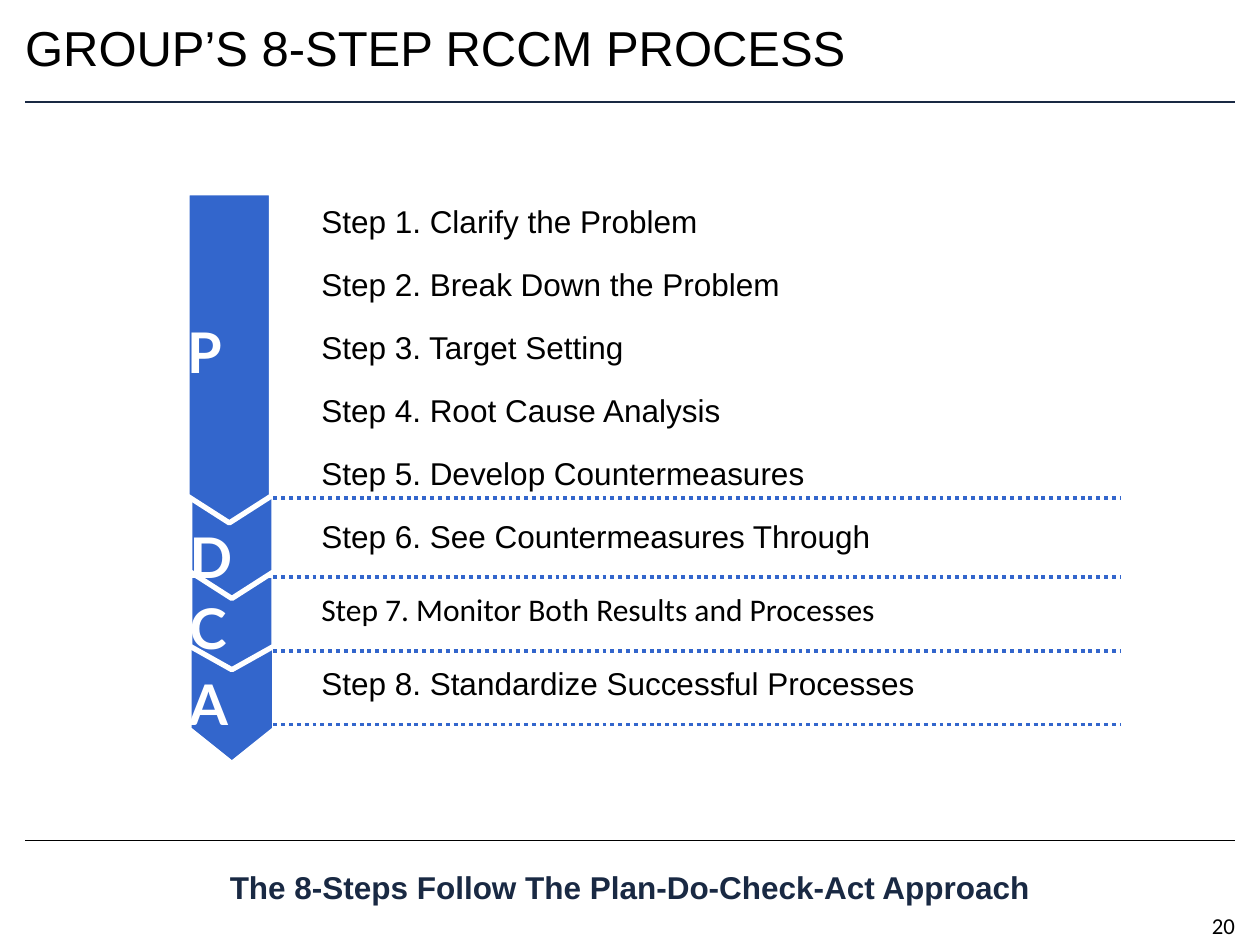
"""Build the eight-step problem-solving slide with its Plan-Do-Check-Act column."""

from dataclasses import dataclass

import pptx
import pptx.dml.color
import pptx.enum.dml
import pptx.enum.shapes
import pptx.enum.text
import pptx.oxml.ns
import pptx.util
from lxml import etree

Inches = pptx.util.Inches
Align = pptx.enum.text.PP_ALIGN
Anchor = pptx.enum.text.MSO_ANCHOR


@dataclass(frozen=True)
class Theme:
    black: str = "000000"
    navy: str = "192943"
    blue: str = "3366CC"
    white: str = "FFFFFF"
    sans: str = "Arial"
    body: str = "Calibri"
    display: str = "Lato"
    title_size: float = 28
    text_size: float = 18
    letter_size: float = 32
    number_size: float = 13


THEME = Theme()


@dataclass(frozen=True)
class Label:
    text: str
    left: float
    top: float
    width: float
    height: float
    size: float = THEME.text_size
    font: str = THEME.sans
    color: str = THEME.black
    bold: bool = False
    align: Align = Align.LEFT
    anchor: Anchor = Anchor.TOP
    spacing: float | None = None
    insets: tuple = (0, 0, 0, 0)
    wrap: bool = True


@dataclass(frozen=True)
class Phase:
    letter: str
    center_x: float
    center_y: float
    length: float
    breadth: float
    tip: float
    top_inset: float


@dataclass(frozen=True)
class Rule:
    left: float
    right: float
    y: float
    color: str
    weight: float
    dotted: bool = False


PHASES = [
    Phase("A", 1.84, 5.56, 1.0, 0.68, 0.4, 0.22),
    Phase("C", 1.84, 4.94, 0.75, 0.67, 0.28, 0.22),
    Phase("D", 1.84, 4.2, 1.1, 0.67, 0.32, 0.58),
    Phase("P", 1.82, 2.84, 2.62, 0.67, 0.32, 0.05),
]

STEPS = [
    ("Clarify the Problem", 1.48),
    ("Break Down the Problem", 1.98),
    ("Target Setting", 2.48),
    ("Root Cause Analysis", 2.98),
    ("Develop Countermeasures", 3.48),
    ("See Countermeasures Through", 3.98),
    ("Monitor Both Results and Processes", 4.56),
    ("Standardize Successful Processes", 5.15),
]

RULES = [
    Rule(0.2, 9.8, 0.81, THEME.navy, 0.75),
    Rule(0.2, 9.8, 6.67, THEME.black, 1),
    *(Rule(2.17, 8.9, y, THEME.blue, 2.25, True) for y in (3.95, 4.58, 5.17, 5.75)),
]

FRAME = [
    Label("GROUP’S 8-STEP RCCM PROCESS", 0.2, 0.11, 9.19, 0.67,
          size=THEME.title_size, spacing=36),
    Label("The 8-Steps Follow The Plan-Do-Check-Act Approach", 0, 6.72, 10, 0.47,
          color=THEME.navy, bold=True, align=Align.CENTER,
          anchor=Anchor.BOTTOM, spacing=26),
    Label("20", 7.47, 7.25, 2.33, 0.2, size=THEME.number_size, font=THEME.body,
          align=Align.RIGHT, anchor=Anchor.BOTTOM),
]


def rgb(value: str) -> pptx.dml.color.RGBColor:
    """Turn a hex string into a colour."""
    return pptx.dml.color.RGBColor.from_string(value)


def set_format(target, values: dict) -> None:
    """Set each named attribute on the target."""
    for name, value in values.items():
        setattr(target, name, value)


def write_text(shape, label: Label) -> None:
    """Write one formatted paragraph into a shape."""
    frame = shape.text_frame
    margins = ("margin_left", "margin_top", "margin_right", "margin_bottom")
    set_format(frame, {name: Inches(inset) for name, inset in zip(margins, label.insets)})
    set_format(frame, {"word_wrap": label.wrap, "vertical_anchor": label.anchor})
    paragraph = frame.paragraphs[0]
    paragraph.alignment = label.align
    if label.spacing:
        paragraph.line_spacing = pptx.util.Pt(label.spacing)
    run = paragraph.add_run()
    run.text = label.text
    set_format(run.font, {"name": label.font, "size": pptx.util.Pt(label.size),
                          "bold": label.bold})
    run.font.color.rgb = rgb(label.color)


def add_label(slide, label: Label) -> None:
    """Add a text box."""
    box = slide.shapes.add_textbox(Inches(label.left), Inches(label.top),
                                   Inches(label.width), Inches(label.height))
    write_text(box, label)


def add_phase(slide, phase: Phase) -> None:
    """Add a downward arrow holding its upright letter."""
    left = phase.center_x - phase.length / 2
    top = phase.center_y - phase.breadth / 2
    shape = slide.shapes.add_shape(
        pptx.enum.shapes.MSO_SHAPE.PENTAGON, Inches(left), Inches(top),
        Inches(phase.length), Inches(phase.breadth))
    shape.rotation = 90
    shape.adjustments[0] = phase.tip
    shape.shadow.inherit = False
    shape.fill.solid()
    shape.fill.fore_color.rgb = rgb(THEME.blue)
    shape.line.color.rgb = rgb(THEME.white)
    shape.line.width = pptx.util.Pt(3)
    write_text(shape, Label(
        phase.letter, left, top, phase.length, phase.breadth,
        size=THEME.letter_size, font=THEME.display, color=THEME.white, bold=True,
        anchor=Anchor.MIDDLE, insets=(phase.top_inset, 0.05, 0.05, 0)))
    shape.text_frame._txBody.bodyPr.set("vert", "vert270")


def add_rule(slide, rule: Rule) -> None:
    """Add a horizontal line."""
    line = slide.shapes.add_connector(
        pptx.enum.shapes.MSO_CONNECTOR.STRAIGHT, Inches(rule.left), Inches(rule.y),
        Inches(rule.right), Inches(rule.y))
    line.line.color.rgb = rgb(rule.color)
    line.line.width = pptx.util.Pt(rule.weight)
    if rule.dotted:
        line.line.dash_style = pptx.enum.dml.MSO_LINE.ROUND_DOT
    etree.SubElement(line._element.spPr, pptx.oxml.ns.qn("a:effectLst"))


def main() -> None:
    """Build and save the slide."""
    presentation = pptx.Presentation()
    set_format(presentation, {"slide_width": Inches(10), "slide_height": Inches(7.5)})
    slide = presentation.slides.add_slide(presentation.slide_layouts[6])
    for phase in PHASES:
        add_phase(slide, phase)
    for number, (name, top) in enumerate(STEPS, start=1):
        font = THEME.body if number == 7 else THEME.sans
        add_label(slide, Label(f"Step {number}. {name}", 2.33, top, 6.02, 0.54, font=font,
                               anchor=Anchor.MIDDLE, insets=(0.22, 0.05, 0.22, 0.05),
                               wrap=False))
    for rule in RULES:
        add_rule(slide, rule)
    for label in FRAME:
        add_label(slide, label)
    presentation.save("out.pptx")


if __name__ == "__main__":
    main()
